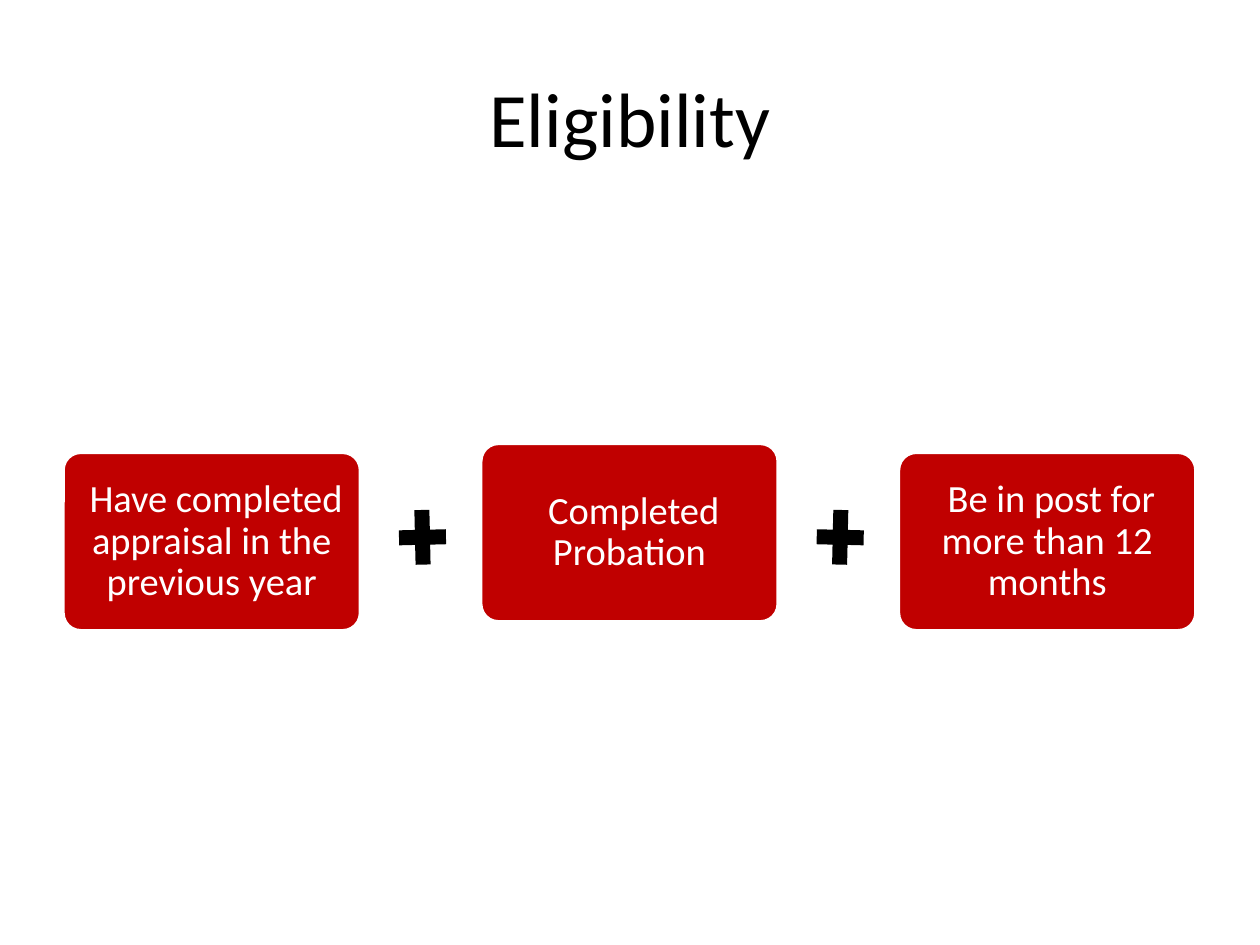
from pptx import Presentation
from pptx.dml.color import RGBColor
from pptx.enum.shapes import MSO_SHAPE
from pptx.enum.text import MSO_ANCHOR, PP_ALIGN
from pptx.util import Pt

CARD_SHAPE = MSO_SHAPE.ROUNDED_RECTANGLE
PLUS_SHAPE = MSO_SHAPE.MATH_PLUS
MIDDLE = MSO_ANCHOR.MIDDLE
CENTER = PP_ALIGN.CENTER

BLACK = RGBColor(0x00, 0x00, 0x00)
WHITE = RGBColor(0xFF, 0xFF, 0xFF)
RED = RGBColor(0xC0, 0x00, 0x00)

# Row of cards, in points
CARD_LEFT, CARD_WIDTH, CARD_HEIGHT = 36, 170, 102
CARD_PITCH = 238.7
PLUS_LEFT, PLUS_TOP, PLUS_WIDTH, PLUS_HEIGHT = 223.2, 285.8, 36.5, 42.5

# Text and top edge of each card; the leading space is part of the wording
CARDS = [
    (" Have completed appraisal in the previous year", 258.5),
    (" Completed Probation", 253.4),
    (" Be in post for more than 12 months", 258.5),
]
PLUS_TILTS = [-1.3, 1.3]


def write_text(box, text, size, color, inset=6.5, line_spacing=1.0):
    frame = box.text_frame
    frame.word_wrap = True
    frame.vertical_anchor = MIDDLE
    frame.margin_left = frame.margin_right = Pt(inset)
    frame.margin_top = frame.margin_bottom = Pt(inset)
    para = frame.paragraphs[0]
    para.alignment = CENTER
    para.line_spacing = line_spacing
    span = para.add_run()
    span.text = text
    span.font.name = "Calibri"
    span.font.size = Pt(size)
    span.font.color.rgb = color


class SlideBuilder:
    """Holds the current slide and the style of its elements."""

    def __init__(self, page, card_fill=RED, card_text=WHITE, ink=BLACK):
        self.page = page
        self.card_fill = card_fill
        self.card_text = card_text
        self.ink = ink

    def shape(self, kind, left, top, width, height, fill):
        shape = self.page.shapes.add_shape(
            kind, Pt(left), Pt(top), Pt(width), Pt(height))
        shape.shadow.inherit = False
        shape.fill.solid()
        shape.fill.fore_color.rgb = fill
        return shape

    def title(self, text):
        box = self.page.shapes.add_textbox(Pt(36), Pt(21.6), Pt(648), Pt(90))
        write_text(box, text, size=44, color=self.ink)

    def card(self, text, left, top):
        card = self.shape(CARD_SHAPE, left, top, CARD_WIDTH, CARD_HEIGHT,
                          self.card_fill)
        card.adjustments[0] = 0.1
        card.line.color.rgb = WHITE
        card.line.width = Pt(2)
        write_text(card, text, size=22, color=self.card_text,
                   line_spacing=0.9)

    def plus(self, left, tilt):
        plus = self.shape(PLUS_SHAPE, left, PLUS_TOP, PLUS_WIDTH, PLUS_HEIGHT,
                          self.ink)
        plus.line.fill.background()
        plus.rotation = tilt


def main():
    deck = Presentation()
    deck.slide_width, deck.slide_height = Pt(720), Pt(540)
    builder = SlideBuilder(deck.slides.add_slide(deck.slide_layouts[6]))

    # Heading
    builder.title("Eligibility")

    # Conditions
    for index, (text, top) in enumerate(CARDS):
        builder.card(text, CARD_LEFT + index * CARD_PITCH, top)

    # Plus signs between the conditions
    for index, tilt in enumerate(PLUS_TILTS):
        builder.plus(PLUS_LEFT + index * CARD_PITCH, tilt)

    deck.save("out.pptx")


if __name__ == "__main__":
    main()
